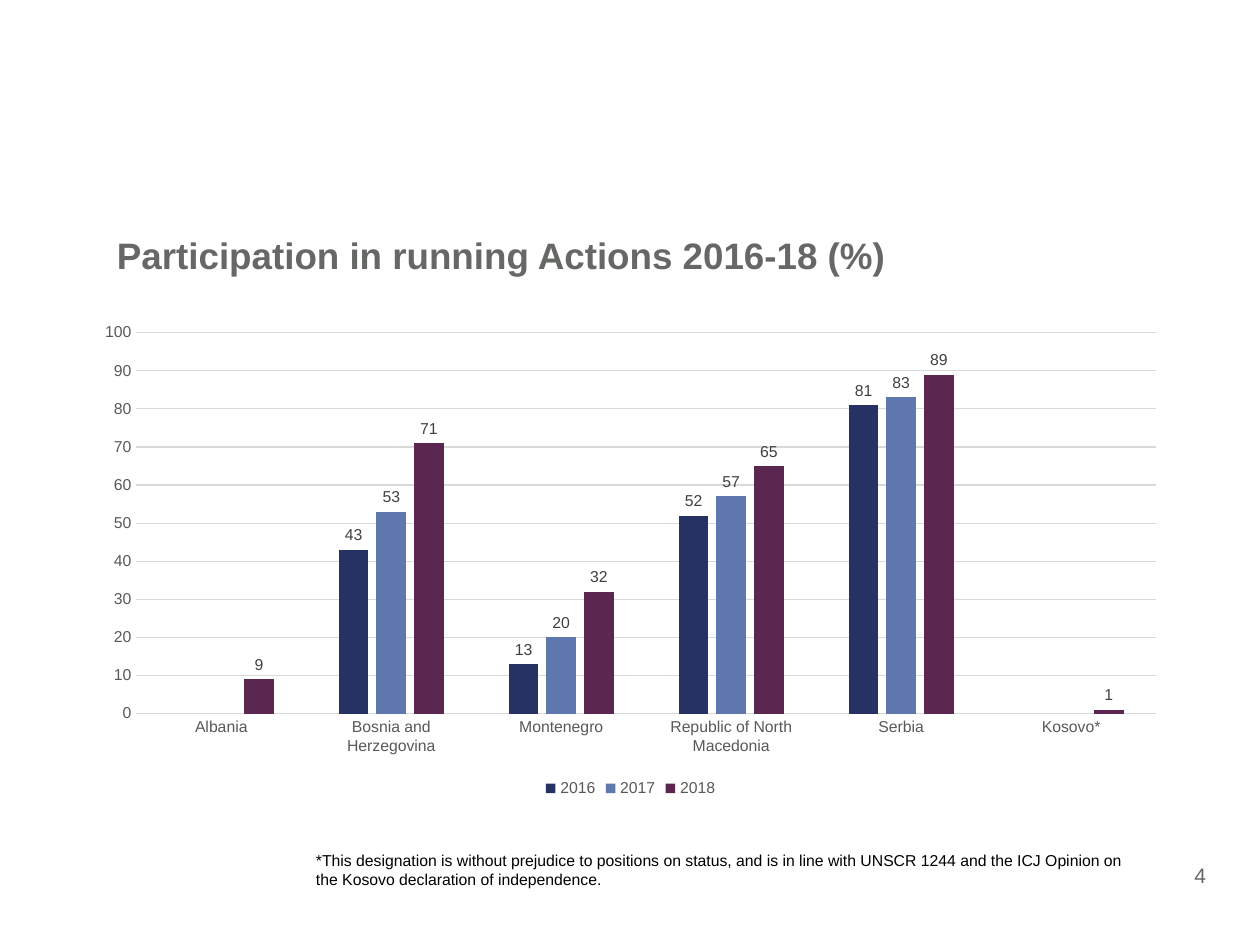
from pptx import Presentation
from pptx import util as u
from pptx.chart.data import CategoryChartData
from pptx.dml.color import RGBColor
from pptx.enum import chart as ch, text

FONT = "Arial"
HEADING = RGBColor(0x65, 0x68, 0x65)
BLACK = RGBColor(0, 0, 0)
AXIS_TEXT = RGBColor(0x59, 0x59, 0x59)
LABEL_TEXT = RGBColor(0x40, 0x40, 0x40)
GRID = RGBColor(0xD9, 0xD9, 0xD9)
NAVY = RGBColor(0x26, 0x32, 0x64)
BLUE = RGBColor(0x5E, 0x78, 0xAD)
PLUM = RGBColor(0x5B, 0x26, 0x50)

COUNTRIES = ["Albania", "Bosnia and Herzegovina", "Montenegro",
             "Republic of North Macedonia", "Serbia", "Kosovo*"]
PARTICIPATION = [
    ("2016", (None, 43, 13, 52, 81, None), NAVY),
    ("2017", (None, 53, 20, 57, 83, None), BLUE),
    ("2018", (9, 71, 32, 65, 89, 1), PLUM),
]


def set_font(font, size, color, bold=False):
    font.name, font.size, font.bold = FONT, u.Pt(size), bold
    font.color.rgb = color


def add_text(slide, box, words, size, color, bold=False,
             align=text.PP_ALIGN.LEFT, spacing=None):
    tf = slide.shapes.add_textbox(*map(u.Inches, box)).text_frame
    tf.word_wrap = True
    p = tf.paragraphs[0]
    p.alignment = align
    if spacing:
        p.line_spacing = spacing
    r = p.add_run()
    r.text = words
    set_font(r.font, size, color, bold)


def style_axis(axis):
    axis.major_tick_mark = axis.minor_tick_mark = ch.XL_TICK_MARK.NONE
    set_font(axis.tick_labels.font, 9, AXIS_TEXT)


def style_line(line):
    line.color.rgb = GRID
    line.width = u.Pt(0.75)


def add_participation_chart(slide, box):
    data = CategoryChartData()
    data.categories = COUNTRIES
    for year, values, _ in PARTICIPATION:
        data.add_series(year, values)
    chart = slide.shapes.add_chart(ch.XL_CHART_TYPE.COLUMN_CLUSTERED,
                                   *map(u.Inches, box), data).chart
    set_font(chart.font, 10, BLACK)
    chart.has_title = False

    # Axes and gridlines
    style_axis(chart.category_axis)
    style_line(chart.category_axis.format.line)
    value_axis = chart.value_axis
    style_axis(value_axis)
    value_axis.minimum_scale, value_axis.maximum_scale = 0, 100
    value_axis.major_unit = 10
    value_axis.format.line.fill.background()
    style_line(value_axis.major_gridlines.format.line)

    # Legend
    chart.has_legend = True
    chart.legend.position = ch.XL_LEGEND_POSITION.BOTTOM
    chart.legend.include_in_layout = False
    set_font(chart.legend.font, 9, AXIS_TEXT)

    # Columns and their values
    plot = chart.plots[0]
    plot.gap_width, plot.overlap = 219, -27
    plot.vary_by_categories = False
    for series, (_, _, color) in zip(plot.series, PARTICIPATION):
        series.format.fill.solid()
        series.format.fill.fore_color.rgb = color
        series.invert_if_negative = False
        labels = series.data_labels
        labels.show_value = True
        labels.position = ch.XL_LABEL_POSITION.OUTSIDE_END
        set_font(labels.font, 9, LABEL_TEXT)


def build_chart_slide(prs):
    slide = prs.slides.add_slide(prs.slide_layouts[6])
    # Page number
    add_text(slide, (7.21, 6.8, 2.46, 0.3), "4", 12, HEADING,
             align=text.PP_ALIGN.RIGHT)
    # Title
    add_text(slide, (0.83, 1.84, 8.69, 0.64),
             "Participation in running Actions 2016-18 (%)", 21, HEADING,
             bold=True, spacing=0.9)
    # Chart
    add_participation_chart(slide, (0.66, 2.49, 8.69, 3.88))
    # Footnote
    add_text(slide, (2.41, 6.7, 6.66, 0.4),
             "*This designation is without prejudice to positions on status, "
             "and is in line with UNSCR 1244 and the ICJ Opinion on the "
             "Kosovo declaration of independence.", 9, BLACK)


def main():
    prs = Presentation()
    prs.slide_width, prs.slide_height = u.Inches(10), u.Inches(7.5)
    build_chart_slide(prs)
    prs.save("out.pptx")


if __name__ == "__main__":
    main()
